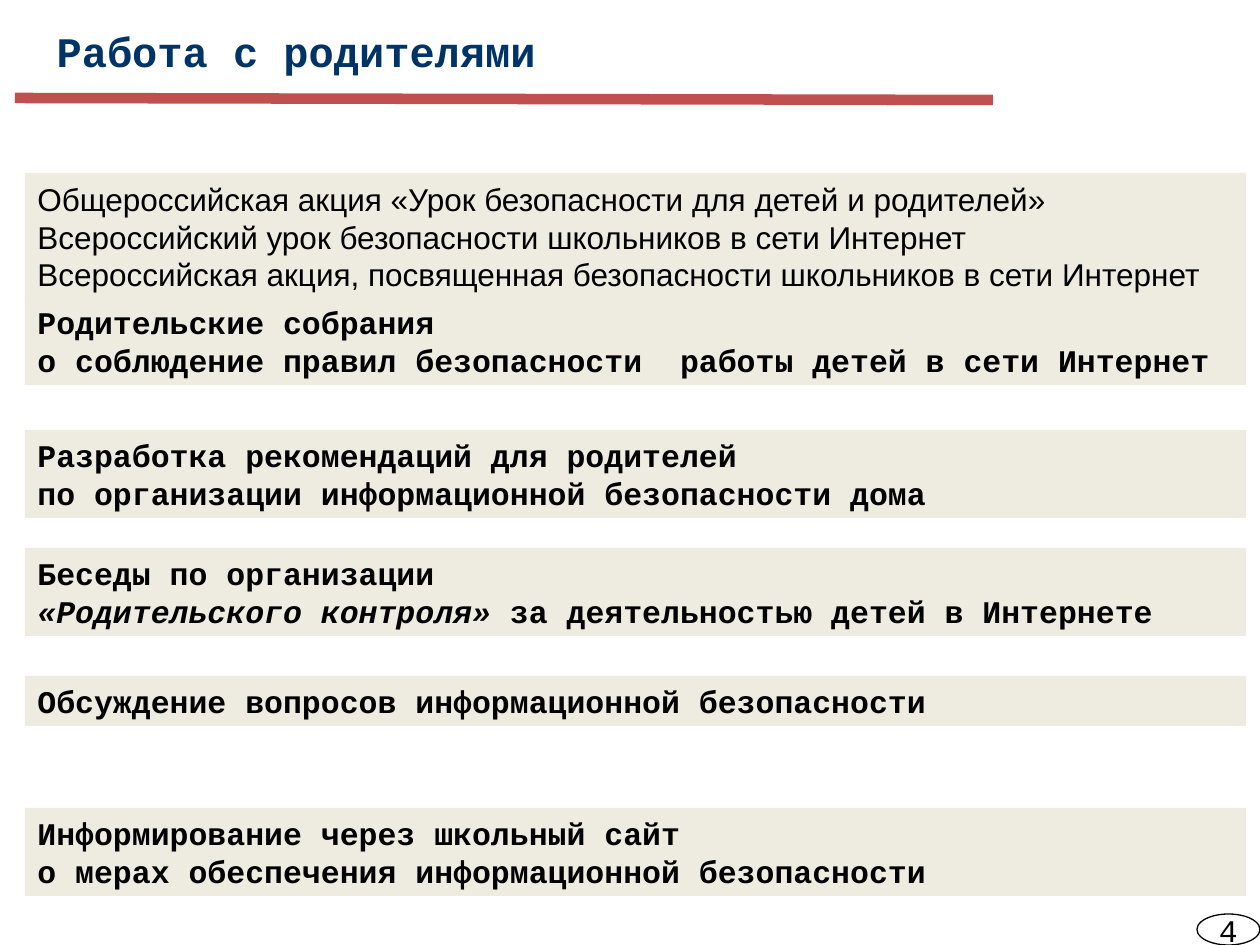
import pptx
import pptx.dml.color
import pptx.enum.shapes
import pptx.enum.text
import pptx.oxml.ns
import pptx.util
from lxml import etree

COLORS = {
    "background": "FFFFFF",
    "panel": "EEECE1",
    "rule": "C0504D",
    "title": "003366",
    "text": "000000",
}
MONO, SANS = "Courier New", "Arial"
PANEL_LEFT, PANEL_WIDTH = 25, 1221
ONE_LINE, TWO_LINES, THREE_LINES = 50, 88, 127


def px(length):
    return pptx.util.Emu(round(length * 914400 / 126))


def rgb(name):
    return pptx.dml.color.RGBColor.from_string(COLORS[name])


class SlideBuilder:
    def __init__(self, presentation):
        self.slide = presentation.slides.add_slide(presentation.slide_layouts[5])
        fill = self.slide.background.fill
        fill.solid()
        fill.fore_color.rgb = rgb("background")

    def format_text(self, text_frame, font=MONO, size=18, color="text", bold=False,
                    align=pptx.enum.text.PP_ALIGN.LEFT):
        for paragraph in text_frame.paragraphs:
            paragraph.alignment = align
            for run in paragraph.runs:
                run.font.name = font
                run.font.size = pptx.util.Pt(size)
                run.font.bold = bold
                run.font.color.rgb = rgb(color)

    def rule(self, start, end, width):
        line = self.slide.shapes.add_connector(
            pptx.enum.shapes.MSO_CONNECTOR.STRAIGHT, *map(px, start + end))
        line.line.color.rgb = rgb("rule")
        line.line.width = pptx.util.Pt(width)
        etree.SubElement(line._element.spPr, pptx.oxml.ns.qn("a:effectLst"))

    def title(self, text, left, top, width, height):
        title = self.slide.shapes.title
        title.left, title.top, title.width, title.height = map(
            px, (left, top, width, height))
        title.fill.solid()
        title.fill.fore_color.rgb = rgb("background")
        frame = title.text_frame
        frame.text = text
        frame.vertical_anchor = pptx.enum.text.MSO_ANCHOR.TOP
        frame.auto_size = pptx.enum.text.MSO_AUTO_SIZE.NONE
        self.format_text(frame, size=24, color="title", bold=True)

    def panel(self, text, top, height, font=MONO, bold=True, emphasis="", ending=""):
        """Add a full-width text band; emphasis is an italic run before the ending."""
        shape = self.slide.shapes.add_shape(
            pptx.enum.shapes.MSO_SHAPE.RECTANGLE,
            *map(px, (PANEL_LEFT, top, PANEL_WIDTH, height)))
        shape.shadow.inherit = False
        shape.fill.solid()
        shape.fill.fore_color.rgb = rgb("panel")
        shape.line.fill.background()
        frame = shape.text_frame
        frame.text = text
        frame.word_wrap = True
        frame.vertical_anchor = pptx.enum.text.MSO_ANCHOR.MIDDLE
        if emphasis:
            paragraph = frame.paragraphs[0]
            italic_run = paragraph.add_run()
            italic_run.text = emphasis
            italic_run.font.italic = True
            paragraph.add_run().text = ending
        self.format_text(frame, font=font, bold=bold)

    def page_number(self, number, left, top, width, height):
        shape = self.slide.shapes.add_shape(
            pptx.enum.shapes.MSO_SHAPE.OVAL, *map(px, (left, top, width, height)))
        shape.shadow.inherit = False
        shape.fill.background()
        shape.line.color.rgb = rgb("text")
        shape.line.width = pptx.util.Pt(0.75)
        frame = shape.text_frame
        frame.text = str(number)
        frame.word_wrap = False
        frame.vertical_anchor = pptx.enum.text.MSO_ANCHOR.MIDDLE
        self.format_text(frame, align=pptx.enum.text.PP_ALIGN.CENTER)


def main():
    presentation = pptx.Presentation()
    presentation.slide_width, presentation.slide_height = px(1260), px(945)
    builder = SlideBuilder(presentation)

    builder.title("Работа с родителями", 44, 19, 1110, 64)
    builder.rule((15, 98), (993, 100), 6)
    builder.panel("Родительские собрания\v"
                  "о соблюдение правил безопасности  работы детей в сети Интернет",
                  297, TWO_LINES)
    builder.panel("Общероссийская акция «Урок безопасности для детей и родителей»\n"
                  "Всероссийский урок безопасности школьников в сети Интернет\n"
                  "Всероссийская акция, посвященная безопасности школьников в сети Интернет",
                  173, THREE_LINES, font=SANS, bold=False)
    builder.panel("Разработка рекомендаций для родителей\v"
                  "по организации информационной безопасности дома", 430, TWO_LINES)
    builder.panel("Беседы по организации\v", 548, TWO_LINES,
                  emphasis="«Родительского контроля»",
                  ending=" за деятельностью детей в Интернете")
    builder.panel("Обсуждение вопросов информационной безопасности", 676, ONE_LINE)
    builder.panel("Информирование через школьный сайт\v"
                  "о мерах обеспечения информационной безопасности", 808, TWO_LINES)
    builder.page_number(4, 1197, 914, 63, 31)

    presentation.save("out.pptx")


if __name__ == "__main__":
    main()
